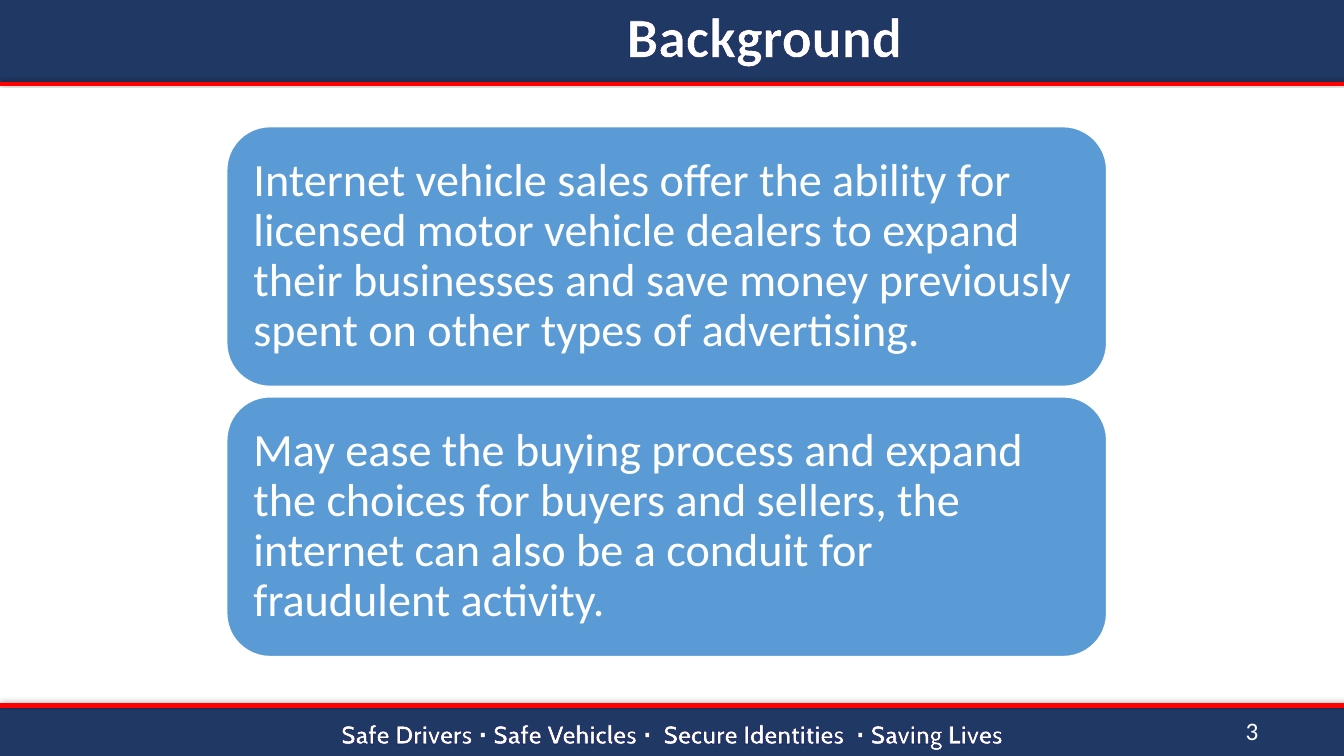
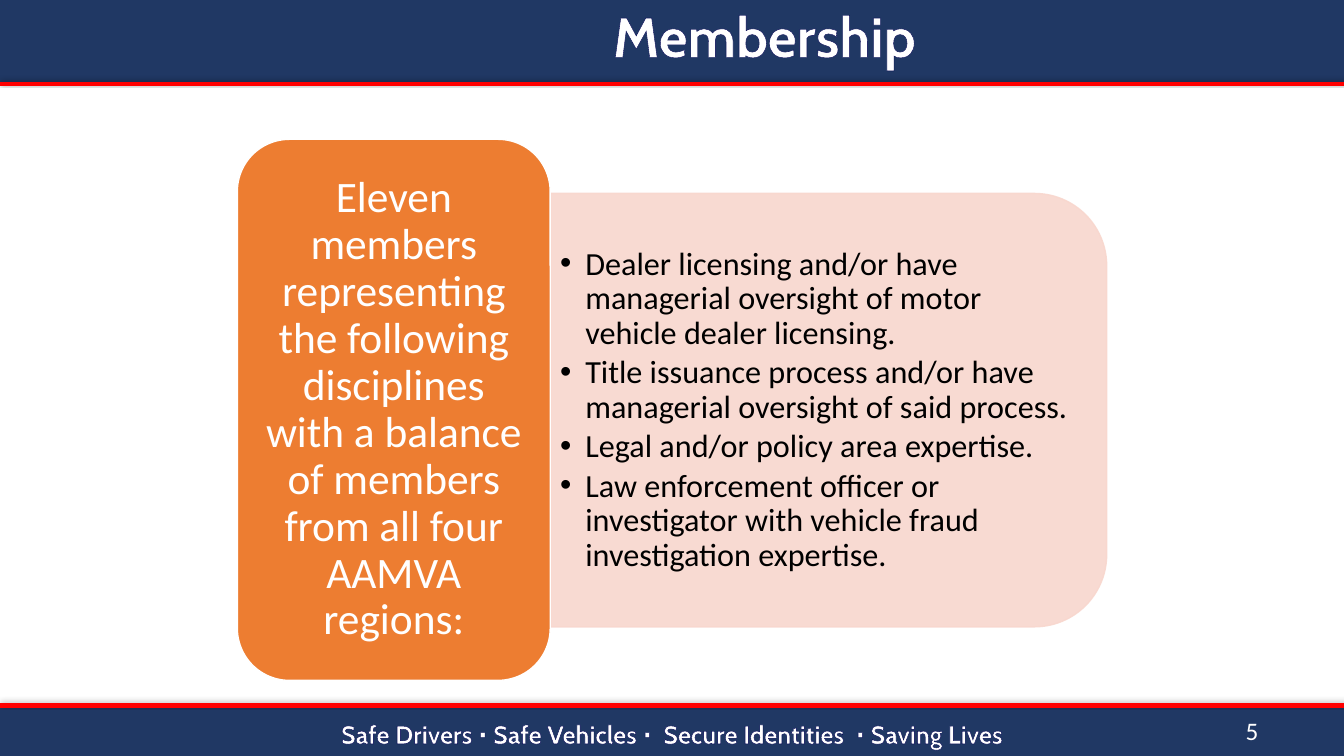
"""Build two banded slides: rounded text tiles and a tile with a bullet panel."""
from dataclasses import dataclass

from lxml.etree import SubElement
from pptx import Presentation
from pptx.dml.color import RGBColor
from pptx.enum.shapes import MSO_CONNECTOR, MSO_SHAPE
from pptx.enum.text import MSO_ANCHOR, PP_ALIGN
from pptx.oxml.ns import qn
from pptx.shapes.autoshape import Shape
from pptx.slide import Slide
from pptx.util import Pt

WIDE, HIGH = 960, 540
HEAD, FOOT = 60, 504
NAVY, RED, WHITE, BLACK = "203864", "FF0000", "FFFFFF", "000000"
BLUE, ORANGE, PINK, EDGE = "5B9BD5", "ED7D31", "F8D7CE", "000052"
MOTTO = "Safe Drivers ∙ Safe Vehicles ∙  Secure Identities  ∙ Saving Lives"


@dataclass(frozen=True)
class Box:
    left: float
    top: float
    width: float
    height: float

    def lengths(self) -> list[Pt]:
        return [Pt(n) for n in (self.left, self.top, self.width, self.height)]


@dataclass(frozen=True)
class Tile:
    box: Box
    text: str
    fill: str
    size: float
    align: PP_ALIGN = PP_ALIGN.LEFT
    inset: tuple[float, float] = (10, 10)


def paint(target, color: str, alpha: int = 100) -> None:
    target.solid()
    target.fore_color.rgb = RGBColor.from_string(color)
    if alpha < 100:
        for node in target._xPr.iter(qn("a:srgbClr")):
            SubElement(node, qn("a:alpha"), val=str(alpha * 1000))


def draw(slide: Slide, kind: MSO_SHAPE, box: Box, fill: str,
         line: str = "", alpha: int = 100) -> Shape:
    shape = slide.shapes.add_shape(kind, *box.lengths())
    shape.shadow.inherit = False
    paint(shape.fill, fill)
    if line:
        shape.line.width = Pt(1)
        paint(shape.line.fill, line)
    else:
        shape.line.fill.background()
    for node in shape._element.spPr.iter(qn("a:srgbClr")):
        if alpha < 100:
            SubElement(node, qn("a:alpha"), val=str(alpha * 1000))
    return shape


def write(shape: Shape, *texts: str, size: float, font: str = "Calibri",
          color: str = WHITE, bold: bool = False, edge: float = 0,
          align: PP_ALIGN = PP_ALIGN.LEFT, anchor: MSO_ANCHOR = MSO_ANCHOR.MIDDLE,
          inset: tuple[float, float] = (7.2, 3.6), lead: float = 1.0,
          after: float = 0, bullet: str = "") -> None:
    frame = shape.text_frame
    frame.word_wrap = True
    frame.vertical_anchor = anchor
    frame.margin_left = frame.margin_right = Pt(inset[0])
    frame.margin_top = frame.margin_bottom = Pt(inset[1])
    for index, text in enumerate(texts):
        para = frame.add_paragraph() if index else frame.paragraphs[0]
        if bullet:
            props = para._p.get_or_add_pPr()
            props.set("marL", str(Pt(18)))
            props.set("indent", str(-Pt(18)))
            SubElement(props, qn("a:buFont"), typeface="Arial")
            SubElement(props, qn("a:buChar"), char=bullet)
        para.alignment = align
        para.line_spacing = lead
        para.space_after = Pt(after)
        run = para.add_run()
        run.text = text
        run.font.size = Pt(size)
        run.font.name = font
        run.font.bold = bold
        paint(run.font.fill, color)
        if edge:
            props = run.font._element
            line = SubElement(props, qn("a:ln"), w=str(Pt(edge)))
            SubElement(SubElement(line, qn("a:solidFill")), qn("a:srgbClr"), val=EDGE)
            props.insert(0, line)


def label(slide: Slide, box: Box, *texts: str, **style) -> None:
    write(slide.shapes.add_textbox(*box.lengths()), *texts, **style)


def rule(slide: Slide, top: float) -> None:
    line = slide.shapes.add_connector(
        MSO_CONNECTOR.STRAIGHT, Pt(0), Pt(top), Pt(WIDE), Pt(top))
    line.line.width = Pt(3)
    paint(line.line.fill, RED)
    effects = SubElement(line._element.spPr, qn("a:effectLst"))
    shadow = SubElement(effects, qn("a:outerShdw"), blurRad=str(Pt(3.1)),
                        dist=str(Pt(1.8)), dir=str(280 * 60000), rotWithShape="0")
    shade = SubElement(shadow, qn("a:srgbClr"), val=BLACK)
    SubElement(shade, qn("a:alpha"), val="35000")


def start(deck: Presentation, title: str, number: int, font: str) -> Slide:
    slide = deck.slides.add_slide(deck.slide_layouts[6])
    foot = draw(slide, MSO_SHAPE.RECTANGLE, Box(0, FOOT, WIDE, HIGH - FOOT), NAVY)
    write(foot, MOTTO, size=18, font="Cabin", bold=True, edge=0.25,
          align=PP_ALIGN.CENTER, lead=1.2)
    draw(slide, MSO_SHAPE.RECTANGLE, Box(0, 0, WIDE, HEAD), NAVY)
    for top in (HEAD, FOOT):
        rule(slide, top)
    label(slide, Box(882.7, 507.6, 51, 29), str(number), size=18,
          anchor=MSO_ANCHOR.TOP)
    label(slide, Box(132, 0, 828, 56), title, size=40, font=font, bold=True,
          edge=0.75, align=PP_ALIGN.CENTER, lead=0.9)
    return slide


def place(slide: Slide, tile: Tile) -> None:
    shape = draw(slide, MSO_SHAPE.ROUNDED_RECTANGLE, tile.box, tile.fill, WHITE)
    write(shape, tile.text, size=tile.size, align=tile.align,
          inset=tile.inset, lead=0.9)


def background(deck: Presentation) -> None:
    slide = start(deck, "Background", 3, "Calibri")
    texts = (
        "Internet vehicle sales offer the ability for licensed motor vehicle "
        "dealers to expand their businesses and save money previously spent on "
        "other types of advertising.",
        "May ease the buying process and expand the choices for buyers and "
        "sellers, the internet can also be a conduit for fraudulent activity.",
    )
    for index, text in enumerate(texts):
        box = Box(162, 90.5 + 193 * index, 628.5, 185.5)
        place(slide, Tile(box, text, BLUE, 33))


def members(deck: Presentation) -> None:
    slide = start(deck, "Membership", 5, "Cabin")
    panel = draw(slide, MSO_SHAPE.ROUND_2_SAME_RECTANGLE,
                 Box(437, 94.3, 309.6, 397.4), PINK, PINK, alpha=90)
    panel.rotation = 90
    label(
        slide, Box(393, 153.4, 382.3, 279.4),
        "Dealer licensing and/or have managerial oversight of motor vehicle "
        "dealer licensing.",
        "Title issuance process and/or have managerial oversight of said process.",
        "Legal and/or policy area expertise.",
        "Law enforcement officer or investigator with vehicle fraud "
        "investigation expertise.",
        size=23, color=BLACK, lead=0.9, after=3.2, bullet="•")
    place(slide, Tile(
        Box(169.5, 99.5, 223.5, 386.5),
        "Eleven members representing the following disciplines with a balance "
        "of members from all four AAMVA regions:",
        ORANGE, 31, PP_ALIGN.CENTER, (9.5, 4.5)))


def main() -> None:
    deck = Presentation()
    deck.slide_width, deck.slide_height = Pt(WIDE), Pt(HIGH)
    background(deck)
    members(deck)
    deck.save("out.pptx")


if __name__ == "__main__":
    main()
